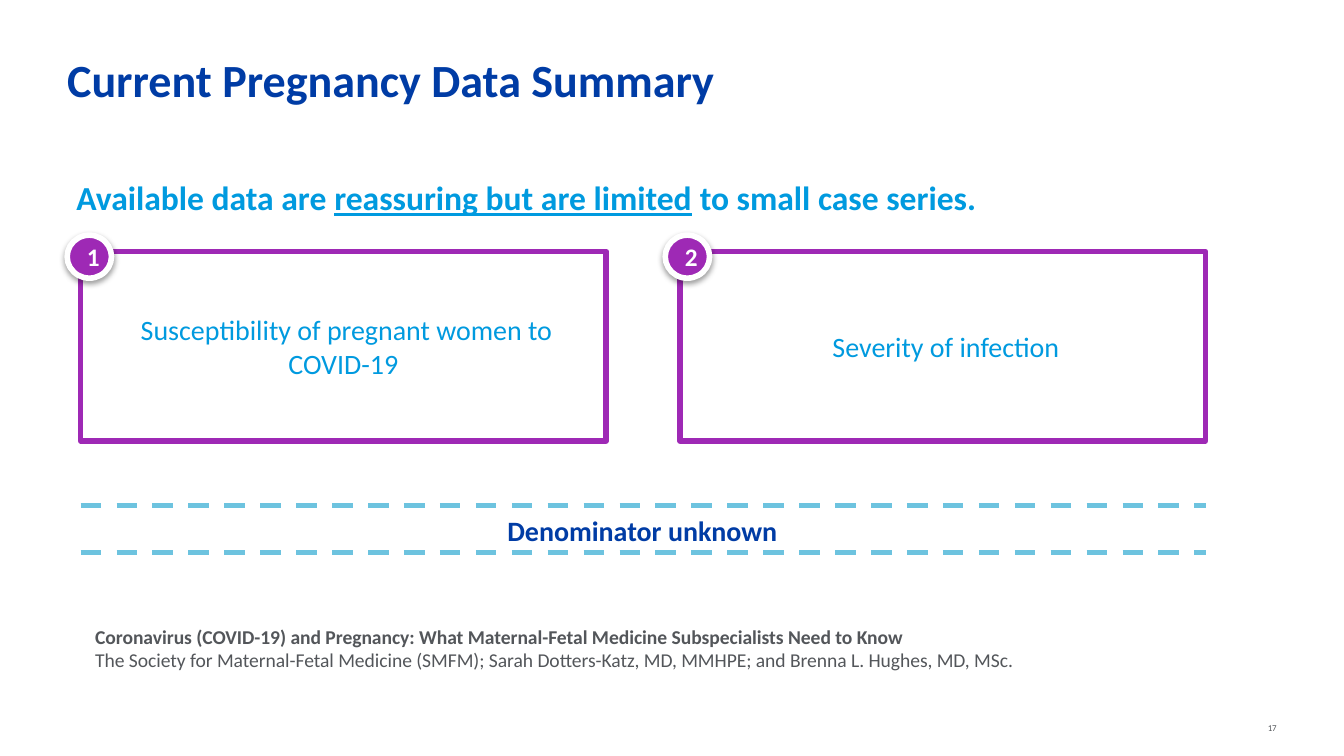
from dataclasses import dataclass

from lxml.etree import SubElement
from pptx import Presentation
from pptx.dml.color import RGBColor
from pptx.enum.dml import MSO_LINE
from pptx.enum.shapes import MSO_CONNECTOR, MSO_SHAPE
from pptx.enum.text import MSO_ANCHOR as Anchor, PP_ALIGN as Align
from pptx.oxml.ns import qn
from pptx.util import Inches, Pt

COLORS = {
    "navy": "003CA5",
    "blue": "009ADF",
    "sky": "6DC3DF",
    "purple": "9E29B5",
    "gray": "53565A",
    "white": "FFFFFF",
    "black": "000000",
}
FONT = "Calibri"
PAGE_WIDTH = 10
PAGE_HEIGHT = PAGE_WIDTH * 9 / 16
LEFT, RIGHT = 0.6, 8.97


@dataclass
class Card:
    number: str
    text: str
    left: float
    badge_left: float


CARDS = [
    Card("1", " Susceptibility of pregnant women to COVID-19", LEFT, 0.5),
    Card("2", " Severity of infection", 5.06, 4.95),
]


def color(name: str) -> RGBColor:
    return RGBColor.from_string(COLORS[name])


def write(shape, *paragraphs, size, ink, bold=False, align=Align.LEFT,
          anchor=Anchor.TOP, inset=None, space_after=None):
    """Fill a shape; a paragraph is a list of (text, font overrides)."""
    frame = shape.text_frame
    frame.word_wrap = True
    frame.vertical_anchor = anchor
    if inset is not None:
        frame.margin_left = frame.margin_right = Inches(inset)
        frame.margin_top = frame.margin_bottom = Inches(inset)
    for index, spans in enumerate(paragraphs):
        para = frame.add_paragraph() if index else frame.paragraphs[0]
        para.alignment = align
        if space_after is not None:
            para.space_after = Pt(space_after)
        for text, overrides in spans:
            span = para.add_run()
            span.text = text
            span.font.name = FONT
            span.font.size = Pt(size)
            span.font.color.rgb = color(ink)
            span.font.bold = overrides.get("bold", bold)
            span.font.underline = overrides.get("underline")


def add_text(page, left: float, top: float, width: float, height: float,
             *paragraphs, **style):
    box = page.shapes.add_textbox(
        Inches(left), Inches(top), Inches(width), Inches(height))
    write(box, *paragraphs, **style)


def add_outlined(page, kind, left: float, top: float, width: float,
                 height: float, fill: str, line: str):
    shape = page.shapes.add_shape(
        kind, Inches(left), Inches(top), Inches(width), Inches(height))
    shape.shadow.inherit = False
    shape.fill.solid()
    shape.fill.fore_color.rgb = color(fill)
    shape.line.color.rgb = color(line)
    shape.line.width = Pt(3)
    SubElement(shape.line._get_or_add_ln(), qn("a:round"))
    return shape


def add_drop_shadow(shape) -> None:
    effects = shape._element.spPr.find(qn("a:effectLst"))
    shadow = SubElement(
        effects, qn("a:outerShdw"), blurRad=str(Pt(3.1)), dist=str(Pt(1.6)),
        dir="5400000", algn="ctr", rotWithShape="0")
    tint = SubElement(shadow, qn("a:srgbClr"), val=COLORS["black"])
    SubElement(tint, qn("a:alpha"), val="38000")


def add_card(page, card: Card) -> None:
    panel = add_outlined(page, MSO_SHAPE.RECTANGLE, card.left, 1.87, 3.91,
                         1.41, "white", "purple")
    write(panel, [(card.text, {})], size=15, ink="blue",
          align=Align.CENTER, anchor=Anchor.MIDDLE)
    badge = add_outlined(page, MSO_SHAPE.OVAL, card.badge_left, 1.75, 0.33,
                         0.32, "purple", "white")
    add_drop_shadow(badge)
    write(badge, [(card.number, {})], size=13.5, ink="white", bold=True,
          align=Align.CENTER, anchor=Anchor.MIDDLE)


def add_dashed_line(page, top: float) -> None:
    rule = page.shapes.add_connector(
        MSO_CONNECTOR.STRAIGHT,
        Inches(LEFT), Inches(top), Inches(RIGHT), Inches(top))
    rule.line.color.rgb = color("sky")
    rule.line.width = Pt(2.75)
    rule.line.dash_style = MSO_LINE.DASH
    SubElement(rule._element.spPr, qn("a:effectLst"))


def main() -> None:
    deck = Presentation()
    deck.slide_width = Inches(PAGE_WIDTH)
    deck.slide_height = Inches(PAGE_HEIGHT)
    page = deck.slides.add_slide(deck.slide_layouts[6])

    # Title, page number and lead sentence
    add_text(page, 0.5, 0.38, 9, 0.65,
             [("Current Pregnancy Data Summary", {})],
             size=24.75, ink="navy", bold=True, inset=0)
    add_text(page, 8.69, 5.23, 0.81, 0.23, [("17", {})], size=4.8,
             ink="gray", align=Align.RIGHT, anchor=Anchor.BOTTOM, inset=0)
    add_text(page, 0.47, 1.27, 8.62, 0.57,
             [("Available data are ", {}),
              ("reassuring but are limited", {"underline": True}),
              (" to small case series.", {})],
             size=18, ink="blue", bold=True, space_after=1.7)

    # Source
    add_text(page, 0.61, 4.6, 8.76, 0.45,
             [("Coronavirus (COVID-19) and Pregnancy: What Maternal-Fetal "
               "Medicine Subspecialists Need to Know", {"bold": True})],
             [("The Society for Maternal-Fetal Medicine (SMFM); Sarah "
               "Dotters-Katz, MD, MMHPE; and Brenna L. Hughes, MD, MSc.", {})],
             size=10.5, ink="gray")

    # Numbered cards
    for card in CARDS:
        add_card(page, card)

    # Caption between dashed lines
    for top in (3.76, 4.11):
        add_dashed_line(page, top)
    add_text(page, 3.32, 3.77, 2.92, 0.35, [("Denominator unknown", {})],
             size=15, ink="navy", bold=True, align=Align.CENTER)

    deck.save("out.pptx")


if __name__ == "__main__":
    main()
